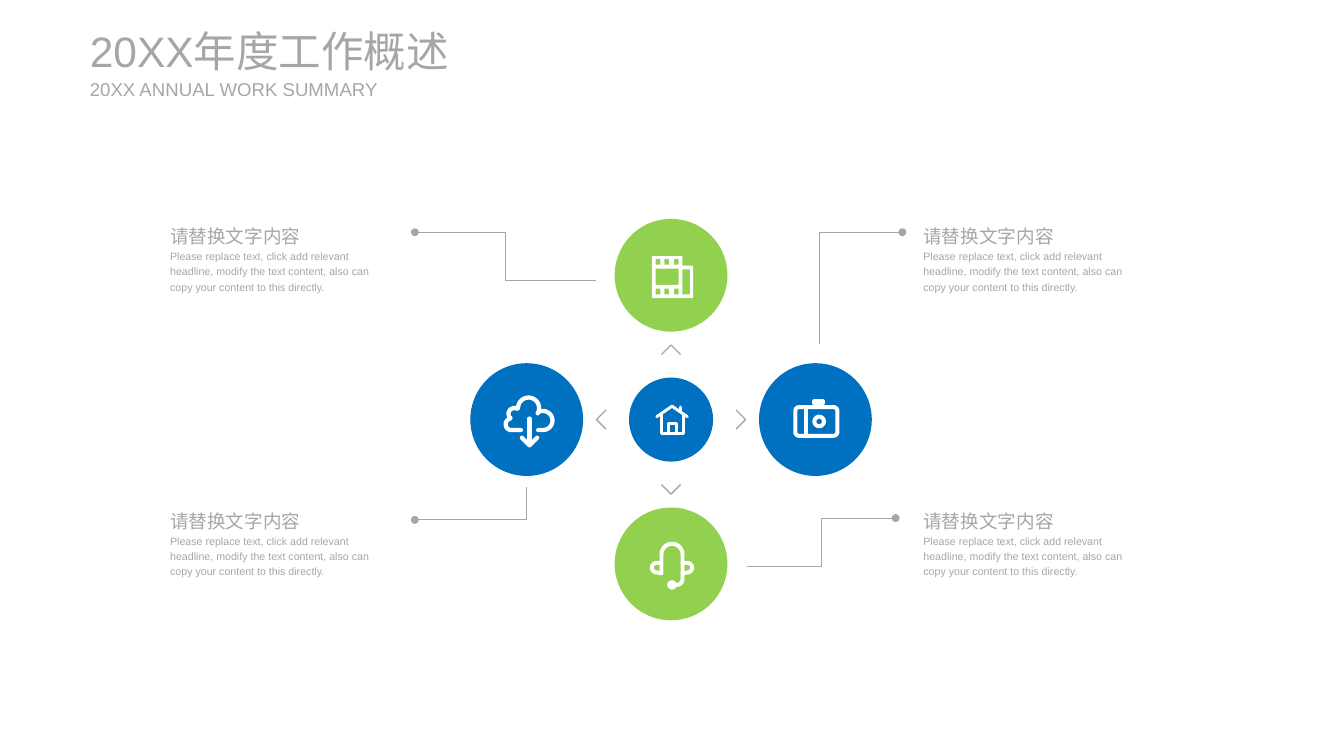
from math import cos, radians, sin

from lxml import etree
from pptx import Presentation
from pptx import util as u
from pptx.dml.color import RGBColor
from pptx.enum import shapes, text
from pptx.oxml.ns import qn

PX = 9144  # EMU, a hundredth of an inch
GREY = RGBColor(0xA6, 0xA6, 0xA6)
GREEN = RGBColor(0x92, 0xD0, 0x50)
BLUE = RGBColor(0x00, 0x70, 0xC0)
WHITE = RGBColor(0xFF, 0xFF, 0xFF)
FONT = "Arial"

prs = Presentation()
prs.slide_width, prs.slide_height = 1406 * PX, 791 * PX
slide = prs.slides.add_slide(prs.slide_layouts[5])


def arc(cx, cy, r, start, end):
    """Points along a circle, in degrees clockwise from the right."""
    angles = [radians(start + (end - start) * i / 24) for i in range(25)]
    return [(cx + r * cos(a), cy + r * sin(a)) for a in angles]


def trace(strokes, color, width, closed=False):
    """Draw one outline made of several strokes, each a list of px points."""
    builder = None
    for stroke in strokes:
        start, *rest = [(x * PX, y * PX) for x, y in stroke]
        if builder is None:
            builder = slide.shapes.build_freeform(*start, scale=1.0)
        else:
            builder.move_to(*start)
        builder.add_line_segments(rest, close=closed)
    outline = builder.convert_to_shape()
    outline.shadow.inherit = False
    outline.fill.background()
    outline.line.color.rgb = color
    outline.line.width = u.Pt(width)
    return outline


# Hub, four satellites and the chevrons between them
HUB_X, HUB_Y = 702, 439
circles = [(HUB_X, HUB_Y, 44, BLUE)]
for dx, dy, color in [(0, -1, GREEN), (1, 0, BLUE), (0, 1, GREEN), (-1, 0, BLUE)]:
    circles.append((HUB_X + 151 * dx, HUB_Y + 151 * dy, 59, color))
    tip_x, tip_y = HUB_X + 78 * dx, HUB_Y + 78 * dy
    back_x, back_y = tip_x - 10 * dx, tip_y - 10 * dy
    trace([[(back_x - 10 * dy, back_y - 10 * dx), (tip_x, tip_y),
            (back_x + 10 * dy, back_y + 10 * dx)]], GREY, 1)

microphone = (703, 612, 5, WHITE)
for x, y, r, color in circles + [microphone]:
    circle = slide.shapes.add_shape(
        shapes.MSO_SHAPE.OVAL, (x - r) * PX, (y - r) * PX, 2 * r * PX, 2 * r * PX)
    circle.shadow.inherit = False
    circle.fill.solid()
    circle.fill.fore_color.rgb = color
    circle.line.fill.background()

# Leader lines, ending in a dot beside each caption
leaders = [
    [(623, 294), (529, 294), (529, 243), (434, 243)],
    [(857, 360), (857, 243), (944, 243)],
    [(781, 593), (859, 593), (859, 542), (937, 542)],
    [(551, 510), (551, 544), (434, 544)],
]
for leader in leaders:
    line = trace([leader], GREY, 0.75)
    ln = line._element.spPr.find(qn("a:ln"))
    etree.SubElement(ln, qn("a:tailEnd"), type="oval")

# Film icon: a filled outline with rectangular holes
film_edge = [(682, 268), (714, 268), (714, 278), (725, 278), (725, 312), (682, 312)]
holes = [(686, 281, 710, 298), (714, 282, 722, 308)]
holes += [(x, y, x + 5, y + 6) for x in (686, 695, 705) for y in (271, 302)]
film = trace([film_edge] + [[(l, t), (l, b), (r, b), (r, t)] for l, t, r, b in holes],
             WHITE, 1, closed=True)
film.fill.solid()
film.fill.fore_color.rgb = WHITE
film.line.fill.background()

# Icons drawn with a round pen
cloud = [
    [(545, 450)] + arc(535, 444, 6, 90, 250) + arc(538, 433, 6, 130, 300)
    + arc(553, 427, 11, 180, 390) + arc(568, 440, 10, 240, 450) + [(563, 450)],
    [(554, 438), (554, 465)],
    [(546, 458), (554, 466), (562, 458)],
]
headset = [
    [(692, 589)] + arc(687, 594, 5, 270, 90) + [(692, 600)]
    + arc(703, 580, 11, 180, 360) + arc(708, 606, 6, 0, 90) + [(704, 612)],
    [(714, 589)] + arc(719, 594, 5, 270, 450) + [(714, 600)],
]
camera = [
    arc(836, 430, 4, 180, 270) + arc(872, 430, 4, 270, 360)
    + arc(872, 452, 4, 0, 90) + arc(836, 452, 4, 90, 180) + [(832, 430)],
    [(843, 426), (843, 456)],
    arc(857, 441, 5, 0, 360),
    [(852, 422), (852, 420), (861, 420), (861, 422), (852, 422)],
]
house = [
    [(687, 436), (703, 425), (719, 436)],
    [(692, 434), (692, 454), (715, 454), (715, 434)],
    [(699, 454), (699, 443), (708, 443), (708, 454)],
    [(712, 426), (712, 431)],
]
for icon, pen in [(cloud, 3.2), (headset, 3), (camera, 3), (house, 2.2)]:
    drawing = trace(icon, WHITE, pen)
    ln = drawing._element.spPr.find(qn("a:ln"))
    ln.set("cap", "rnd")
    etree.SubElement(ln, qn("a:round"))

# Title, subtitle and the four captions
title = slide.shapes.title
title.left, title.top, title.width, title.height = 94 * PX, 26 * PX, 432 * PX, 54 * PX
subtitle = slide.shapes.add_textbox(94 * PX, 81 * PX, 307 * PX, 24 * PX)
blocks = [(title, [("20XX年度工作概述", 32)], 1),
          (subtitle, [("20XX ANNUAL WORK SUMMARY", 14)], 1)]

caption_text = [
    ("请替换文字内容", 14),
    ("Please replace text, click add relevant headline, modify the text content, "
     "also can copy your content to this directly.", 8),
]
for x in (178, 966):
    for y in (231, 529):
        caption = slide.shapes.add_textbox(x * PX, y * PX, 233 * PX, 77 * PX)
        blocks.append((caption, caption_text, 1.2))

for block, lines, spacing in blocks:
    frame = block.text_frame
    frame.word_wrap = True
    frame.auto_size = text.MSO_AUTO_SIZE.NONE
    frame.margin_left = frame.margin_right = frame.margin_top = frame.margin_bottom = 0
    frame.vertical_anchor = (
        text.MSO_ANCHOR.TOP if lines is caption_text else text.MSO_ANCHOR.MIDDLE)
    frame.text = "\n".join(words for words, size in lines)
    for paragraph, (words, size) in zip(frame.paragraphs, lines):
        paragraph.alignment = text.PP_ALIGN.LEFT
        paragraph.line_spacing = spacing
        paragraph.font.name = FONT
        paragraph.font.size = u.Pt(size)
        paragraph.font.color.rgb = GREY

prs.save("out.pptx")
